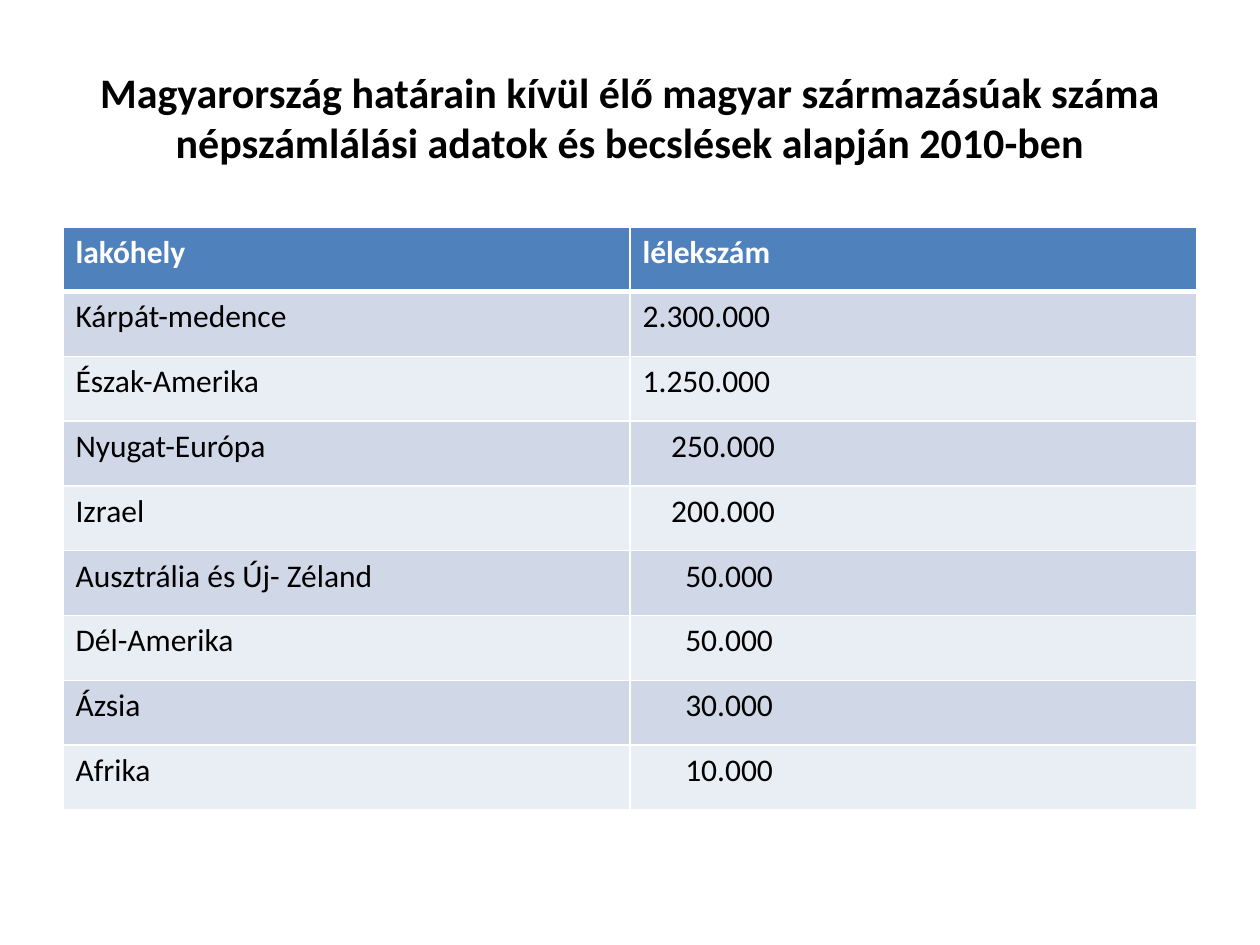
from lxml import etree
from pptx import Presentation
from pptx.dml.color import RGBColor
from pptx.enum.text import MSO_ANCHOR, PP_ALIGN
from pptx.oxml.ns import qn
from pptx.util import Pt

CENTER, LEFT = PP_ALIGN.CENTER, PP_ALIGN.LEFT
MIDDLE, TOP = MSO_ANCHOR.MIDDLE, MSO_ANCHOR.TOP
TITLE_ONLY = 5
FONT = "Calibri"
COLORS = {"text": "000000", "white": "FFFFFF", "header": "4F81BD",
          "band_dark": "D0D8E8", "band_light": "E9EDF4"}

TITLE = ("Magyarország határain kívül élő magyar származásúak száma "
         "népszámlálási adatok és becslések alapján 2010-ben")
ROWS = [
    ("lakóhely", "lélekszám"),
    ("Kárpát-medence", "2.300.000"),
    ("Észak-Amerika", "1.250.000"),
    ("Nyugat-Európa", "250.000"),
    ("Izrael", "200.000"),
    ("Ausztrália és Új- Zéland", "50.000"),
    ("Dél-Amerika", "50.000"),
    ("Ázsia", "30.000"),
    ("Afrika", "10.000"),
]
CELL_MARGIN = 7.2
# Extra indent of a number by its length, so that the digits line up
INDENTS = {"250.000": 16.3, "200.000": 16.3,
           "50.000": 24.4, "30.000": 24.4, "10.000": 24.4}


def rgb(name):
    return RGBColor.from_string(COLORS[name])


def write_text(tf, text, size=18, color="text", bold=False, align=LEFT):
    p = tf.paragraphs[0]
    p.alignment = align
    r = p.add_run()
    r.text = text
    r.font.name = FONT
    r.font.size = Pt(size)
    r.font.bold = bold
    r.font.color.rgb = rgb(color)


def set_borders(cell, top=1, bottom=1):
    tc_pr = cell._tc.get_or_add_tcPr()
    widths = {"a:lnL": 1, "a:lnR": 1, "a:lnT": top, "a:lnB": bottom}
    for i, (tag, width) in enumerate(widths.items()):
        ln = etree.Element(qn(tag), w=str(Pt(width)))
        fill = etree.SubElement(ln, qn("a:solidFill"))
        etree.SubElement(fill, qn("a:srgbClr"), val=COLORS["white"])
        tc_pr.insert(i, ln)


def add_title(s, x, y, w, h):
    sp = s.shapes.title
    sp.left, sp.top, sp.width, sp.height = Pt(x), Pt(y), Pt(w), Pt(h)
    tf = sp.text_frame
    tf.word_wrap = True
    tf.vertical_anchor = MIDDLE
    write_text(tf, TITLE, size=24, bold=True, align=CENTER)


def add_population_table(s, x, y, w, h):
    n_rows, n_cols = len(ROWS), len(ROWS[0])
    table = s.shapes.add_table(n_rows, n_cols, Pt(x), Pt(y), Pt(w), Pt(h)).table
    for col in table.columns:
        col.width = Pt(w / n_cols)
    for i, values in enumerate(ROWS):
        table.rows[i].height = Pt(h / n_rows)
        header = i == 0
        band = "header" if header else "band_dark" if i % 2 else "band_light"
        for j, value in enumerate(values):
            cell = table.cell(i, j)
            cell.fill.solid()
            cell.fill.fore_color.rgb = rgb(band)
            cell.vertical_anchor = TOP
            cell.margin_left = Pt(CELL_MARGIN + INDENTS.get(value, 0))
            write_text(cell.text_frame, value, bold=header,
                       color="white" if header else "text")
            set_borders(cell, top=3 if i == 1 else 1, bottom=3 if header else 1)


def main():
    prs = Presentation()
    prs.slide_width, prs.slide_height = Pt(720), Pt(540)
    s = prs.slides.add_slide(prs.slide_layouts[TITLE_ONLY])
    add_title(s, 36, 21.6, 648, 90)
    add_population_table(s, 36, 129.6, 648, 333.4)
    prs.save("out.pptx")


if __name__ == "__main__":
    main()
